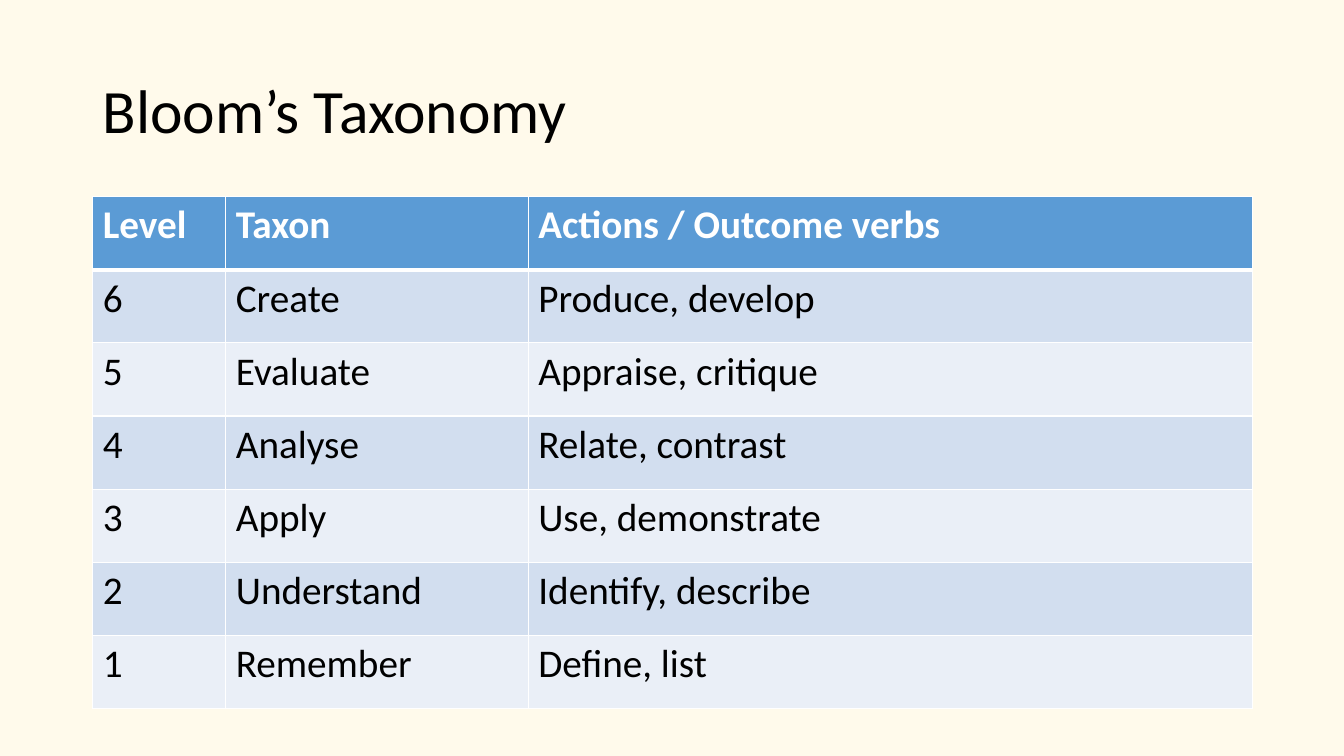
"""Build the Bloom's Taxonomy slide: a title above a banded table of levels."""
from dataclasses import dataclass

from lxml import etree
from pptx import Presentation, util as u
from pptx.dml.color import RGBColor
from pptx.enum import text as t
from pptx.oxml import ns

HEADING = "Bloom’s Taxonomy"
LEVELS = [
    ("Level", "Taxon", "Actions / Outcome verbs"),
    ("6", "Create", "Produce, develop"),
    ("5", "Evaluate", "Appraise, critique"),
    ("4", "Analyse", "Relate, contrast"),
    ("3", "Apply", "Use, demonstrate"),
    ("2", "Understand", "Identify, describe"),
    ("1", "Remember", "Define, list"),
]

PX_PER_INCH = 100
SLIDE = (1333, 750)
HEADING_BOX = (92, 40, 1150, 145)
TABLE_BOX = (92, 195, 1150, 508)
COLUMN_WIDTHS = (132, 300, 718)


@dataclass(frozen=True)
class Theme:
    font: str = "Calibri"
    background: str = "FFFAEB"
    ink: str = "000000"
    header_ink: str = "FFFFFF"
    header_fill: str = "5B9BD5"
    bands: tuple = ("D2DEEF", "EAEFF7")
    rule: str = "FFFFFF"
    thin_rule: int = 1
    thick_rule: int = 3
    heading_size: int = 44
    body_size: int = 28


THEME = Theme()


def px(length):
    return u.Emu(round(length * u.Inches(1) / PX_PER_INCH))


def style_text(frame, size, color, bold=False):
    for paragraph in frame.paragraphs:
        for run in paragraph.runs:
            run.font.name = THEME.font
            run.font.size = u.Pt(size)
            run.font.bold = bold
            run.font.color.rgb = RGBColor.from_string(color)


def add_border(cell, side, points):
    properties = cell._tc.get_or_add_tcPr()
    line = etree.SubElement(properties, ns.qn(f"a:ln{side}"), w=str(u.Pt(points)))
    fill = etree.SubElement(line, ns.qn("a:solidFill"))
    etree.SubElement(fill, ns.qn("a:srgbClr"), val=THEME.rule)


def add_heading(slide):
    frame = slide.shapes.add_textbox(*map(px, HEADING_BOX)).text_frame
    frame.word_wrap = True
    frame.vertical_anchor = t.MSO_ANCHOR.MIDDLE
    frame.text = HEADING
    frame.paragraphs[0].line_spacing = 0.9
    style_text(frame, THEME.heading_size, THEME.ink)


def style_cell(cell, row):
    is_header = row == 0
    top = THEME.thick_rule if row == 1 else THEME.thin_rule
    bottom = THEME.thick_rule if is_header else THEME.thin_rule
    borders = {"L": THEME.thin_rule, "R": THEME.thin_rule, "T": top, "B": bottom}
    for side, points in borders.items():
        add_border(cell, side, points)
    band = THEME.header_fill if is_header else THEME.bands[(row - 1) % 2]
    cell.fill.solid()
    cell.fill.fore_color.rgb = RGBColor.from_string(band)
    ink = THEME.header_ink if is_header else THEME.ink
    style_text(cell.text_frame, THEME.body_size, ink, is_header)


def add_levels(slide):
    levels = slide.shapes.add_table(
        len(LEVELS), len(COLUMN_WIDTHS), *map(px, TABLE_BOX)).table
    for column, width in zip(levels.columns, COLUMN_WIDTHS):
        column.width = px(width)
    for row, entries in enumerate(LEVELS):
        levels.rows[row].height = px(TABLE_BOX[3] / len(LEVELS))
        for column, entry in enumerate(entries):
            cell = levels.cell(row, column)
            cell.text_frame.text = entry
            style_cell(cell, row)


def main():
    deck = Presentation()
    deck.slide_width, deck.slide_height = map(px, SLIDE)
    slide = deck.slides.add_slide(deck.slide_layouts[6])
    slide.background.fill.solid()
    slide.background.fill.fore_color.rgb = RGBColor.from_string(THEME.background)
    add_heading(slide)
    add_levels(slide)
    deck.save("out.pptx")


if __name__ == "__main__":
    main()
